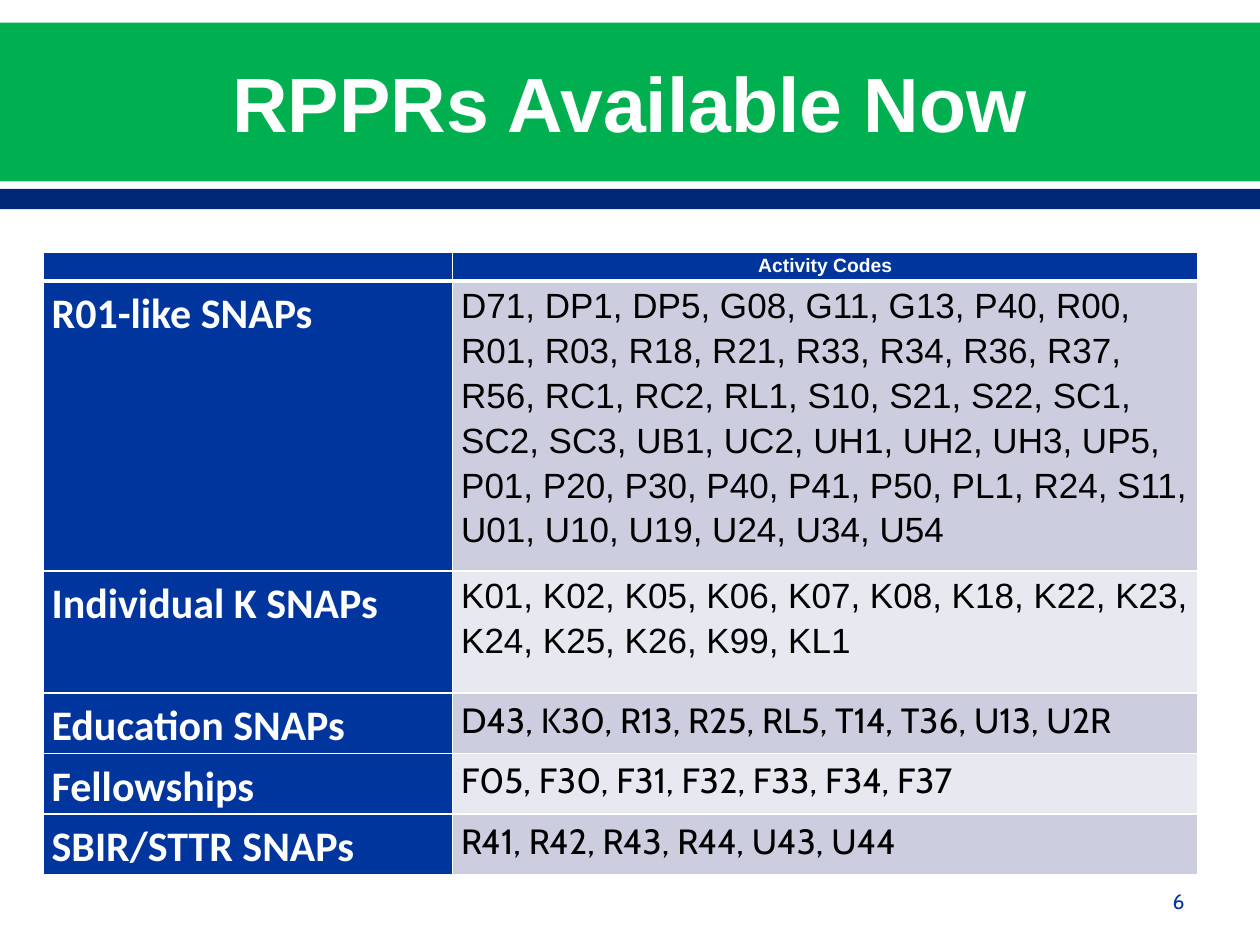
from dataclasses import dataclass

from lxml import etree
from pptx import Presentation
from pptx.dml.color import RGBColor
from pptx.enum.shapes import MSO_SHAPE
from pptx.enum.text import MSO_ANCHOR, PP_ALIGN
from pptx.oxml.ns import qn
from pptx.util import Inches, Pt

RECT = MSO_SHAPE.RECTANGLE
MIDDLE = MSO_ANCHOR.MIDDLE
LEFT, CENTER, RIGHT = PP_ALIGN.LEFT, PP_ALIGN.CENTER, PP_ALIGN.RIGHT

COLORS = {
    "green": "00B050",
    "navy": "002876",
    "blue": "00359E",
    "dark": "CCCEDF",
    "light": "E7E8F0",
    "white": "FFFFFF",
    "black": "000000",
}


@dataclass
class Style:
    font: str
    size: int
    color: str
    bold: bool = False
    align: PP_ALIGN = LEFT


@dataclass
class Band:
    top: float
    height: float
    color: str


@dataclass
class Label:
    box: tuple[float, float, float, float]
    text: str
    style: Style


@dataclass
class Group:
    name: str
    codes: str
    height: float
    font: str


BANDS = [Band(0.18, 1.26, "green"), Band(1.5, 0.16, "navy")]
LABELS = [
    Label((0.5, 0.2, 9, 1.22), "RPPRs Available Now",
          Style("Arial", 44, "white", True, CENTER)),
    Label((7.17, 6.95, 2.33, 0.4), "6",
          Style("Cabin", 12, "blue", False, RIGHT)),
]
GROUPS = [
    Group("R01-like SNAPs",
          "D71, DP1, DP5, G08, G11, G13, P40, R00, R01, R03, R18, R21, R33, "
          "R34, R36, R37, R56, RC1, RC2, RL1, S10, S21, S22, SC1, SC2, SC3, "
          "UB1, UC2, UH1, UH2, UH3, UP5, P01, P20, P30, P40, P41, P50, PL1, "
          "R24, S11, U01, U10, U19, U24, U34, U54", 1.96, "Arial"),
    Group("Individual K SNAPs",
          "K01, K02, K05, K06, K07, K08, K18, K22, K23, K24, K25, K26, K99, "
          "KL1", 0.97, "Arial"),
    Group("Education SNAPs",
          "D43, K30, R13, R25, RL5, T14, T36, U13, U2R", 0.48, "Cabin"),
    Group("Fellowships", "F05, F30, F31, F32, F33, F34, F37", 0.48, "Cabin"),
    Group("SBIR/STTR SNAPs", "R41, R42, R43, R44, U43, U44", 0.48, "Cabin"),
]
WIDTHS = [3.25, 5.92]
HEAD = 0.23
HEAD_STYLE = Style("Arial", 11, "white", True, CENTER)
NAME_STYLE = Style("Calibri", 24, "white", True)


def rgb(name: str) -> RGBColor:
    return RGBColor.from_string(COLORS[name])


def set_text(frame, text: str, style: Style):
    frame.text = text
    para = frame.paragraphs[0]
    para.alignment = style.align
    for run in para.runs:
        font = run.font
        font.name = style.font
        font.size = Pt(style.size)
        font.bold = style.bold
        font.color.rgb = rgb(style.color)
    return para


def draw_band(slide, band: Band, width: int) -> None:
    shape = slide.shapes.add_shape(
        RECT, 0, Inches(band.top), width, Inches(band.height))
    shape.shadow.inherit = False
    shape.fill.solid()
    shape.fill.fore_color.rgb = rgb(band.color)
    shape.line.fill.background()


def draw_label(slide, label: Label) -> None:
    box = slide.shapes.add_textbox(*map(Inches, label.box))
    frame = box.text_frame
    frame.word_wrap = True
    frame.vertical_anchor = MIDDLE
    set_text(frame, label.text, label.style)


def set_edges(cell, top: int, base: int) -> None:
    props = cell._tc.get_or_add_tcPr()
    edges = {"lnL": 1, "lnR": 1, "lnT": top, "lnB": base}
    for spot, (tag, width) in enumerate(edges.items()):
        line = etree.Element(qn(f"a:{tag}"), w=str(Pt(width)))
        fill = etree.SubElement(line, qn("a:solidFill"))
        etree.SubElement(fill, qn("a:srgbClr"), val=COLORS["white"])
        props.insert(spot, line)


def fill_cell(cell, text: str, style: Style, fill: str,
              top: int = 1, base: int = 1) -> None:
    cell.margin_left = cell.margin_right = Inches(0.07)
    cell.margin_top = cell.margin_bottom = 0
    cell.fill.solid()
    cell.fill.fore_color.rgb = rgb(fill)
    para = set_text(cell.text_frame, text, style)
    para.line_spacing = 1.15
    para.space_after = Pt(10)
    if not text:
        etree.SubElement(para._p, qn("a:endParaRPr"), sz=str(style.size * 100))
    set_edges(cell, top, base)


def draw_table(slide, groups: list[Group]) -> None:
    highs = [HEAD] + [group.height for group in groups]
    table = slide.shapes.add_table(
        len(highs), len(WIDTHS), Inches(0.34), Inches(2),
        Inches(sum(WIDTHS)), Inches(sum(highs))).table
    for col, width in zip(table.columns, WIDTHS):
        col.width = Inches(width)
    for row, height in zip(table.rows, highs):
        row.height = Inches(height)
    for col, text in enumerate(["", "Activity Codes"]):
        fill_cell(table.cell(0, col), text, HEAD_STYLE, "blue", base=3)
    for row, group in enumerate(groups, 1):
        top = 3 if row == 1 else 1
        fill = "dark" if row % 2 else "light"
        codes = Style(group.font, 20, "black")
        fill_cell(table.cell(row, 0), group.name, NAME_STYLE, "blue", top)
        fill_cell(table.cell(row, 1), group.codes, codes, fill, top)


def main() -> None:
    deck = Presentation()
    deck.slide_width, deck.slide_height = Inches(10), Inches(7.5)
    slide = deck.slides.add_slide(deck.slide_layouts[6])
    for band in BANDS:
        draw_band(slide, band, deck.slide_width)
    for label in LABELS:
        draw_label(slide, label)
    draw_table(slide, GROUPS)
    deck.save("out.pptx")


if __name__ == "__main__":
    main()
